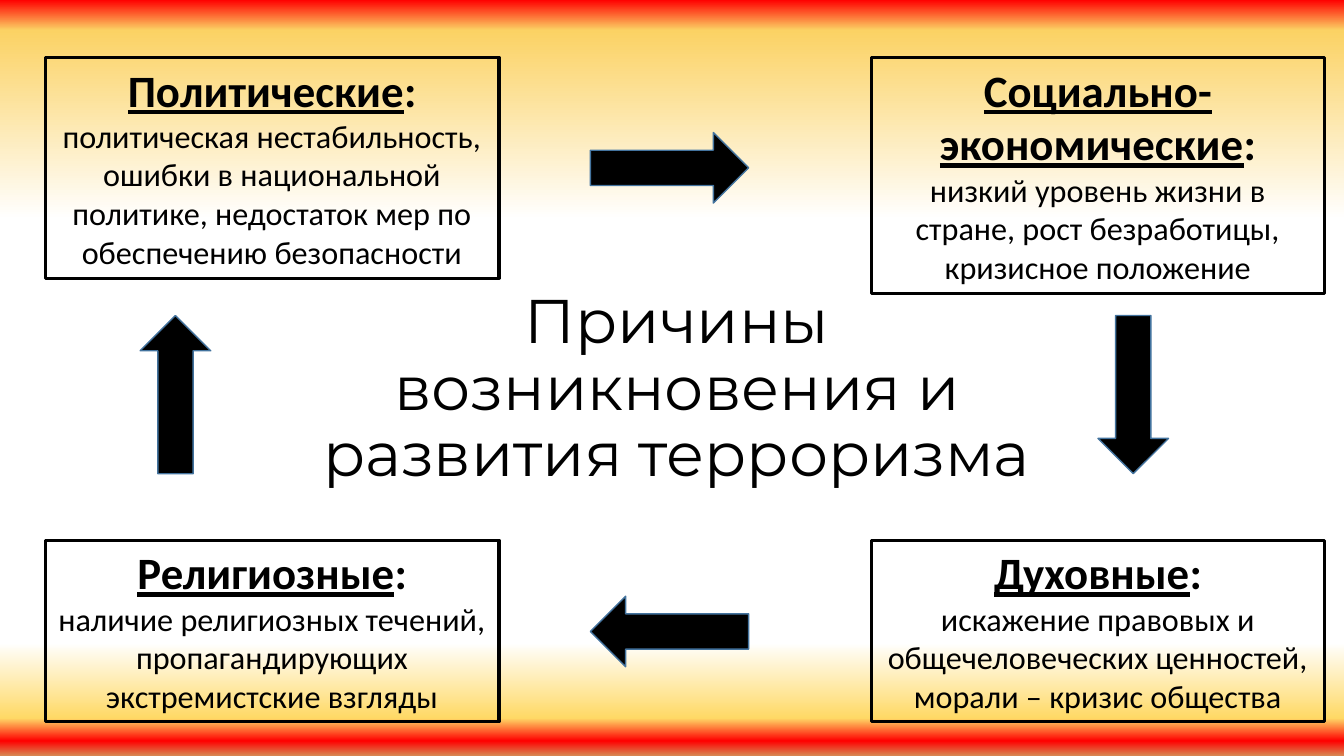
from dataclasses import dataclass

from lxml.etree import SubElement
from pptx import Presentation
from pptx.dml.color import RGBColor
from pptx.enum.shapes import MSO_SHAPE
from pptx.enum.text import MSO_ANCHOR, MSO_AUTO_SIZE, PP_ALIGN
from pptx.oxml.ns import qn
from pptx.slide import Slide
from pptx.text.text import TextFrame
from pptx.util import Emu, Pt

SCALE = 9144  # EMU in one px, 100 px to the inch
COLORS = {"ink": "000000", "edge": "43739E", "red": "FF0000", "gold": "FBD264",
          "white": "FFFFFF", "sand": "FFD966", "clay": "D78853"}
STOPS = [(0, "red"), (4, "gold"), (29, "white"), (85, "white"),
         (95, "sand"), (98, "red"), (100, "clay")]
LEFT, RIGHT, TOP, LOW = 45, 864, 57, 536
BOX_W = 450
ARROW_W, ARROW_H = 70, 157


@dataclass
class Cause:
    x: int
    y: int
    height: int
    name: str
    text: str


@dataclass
class Arrow:
    x: int
    y: int
    turn: int


CAUSES = [
    Cause(LEFT, TOP, 219, "Политические",
          "политическая нестабильность, ошибки в национальной политике, "
          "недостаток мер по обеспечению безопасности"),
    Cause(RIGHT, TOP, 234, "Социально-экономические",
          "низкий уровень жизни в стране, рост безработицы, кризисное положение"),
    Cause(RIGHT, LOW, 180, "Духовные",
          "искажение правовых и общечеловеческих ценностей, "
          "морали – кризис общества"),
    Cause(LEFT, LOW, 180, "Религиозные",
          "наличие религиозных течений, пропагандирующих экстремистские взгляды"),
]
ARROWS = [Arrow(629, 88, 270), Arrow(1089, 313, 0),
          Arrow(629, 548, 90), Arrow(139, 313, 180)]


def px(count: int) -> Emu:
    return Emu(count * SCALE)


def color(name: str) -> RGBColor:
    return RGBColor.from_string(COLORS[name])


def paint_back(slide: Slide) -> None:
    fill = slide.background.fill
    fill.gradient()
    fill.gradient_angle = 270
    stops = slide.element.find(".//" + qn("a:gsLst"))
    stops.clear()
    for place, name in STOPS:
        stop = SubElement(stops, qn("a:gs"), pos=str(place * 1000))
        SubElement(stop, qn("a:srgbClr"), val=COLORS[name])


def style(frame: TextFrame, fonts: list[tuple[str, int, bool]]) -> None:
    """Centre each paragraph and give it a face, a size and a weight."""
    frame.word_wrap = True
    for para, (face, size, bold) in zip(frame.paragraphs, fonts):
        para.alignment = PP_ALIGN.CENTER
        para.font.name = face
        para.font.size = Pt(size)
        para.font.bold = bold
        para.font.color.rgb = color("ink")


def add_title(slide: Slide, text: str) -> None:
    frame = slide.shapes.add_textbox(px(284), px(316), px(775), px(175)).text_frame
    frame.text = text
    frame.vertical_anchor = MSO_ANCHOR.BOTTOM
    frame.paragraphs[0].line_spacing = 0.9
    style(frame, [("Montserrat", 44, False)])


def add_cause(slide: Slide, cause: Cause) -> None:
    box = slide.shapes.add_textbox(px(cause.x), px(cause.y), px(BOX_W), px(cause.height))
    box.line.color.rgb = color("ink")
    box.line.width = Pt(2.25)
    frame = box.text_frame
    head = frame.paragraphs[0]
    name = head.add_run()
    name.text = cause.name
    name.font.underline = True
    head.add_run().text = ":"
    frame.add_paragraph().text = cause.text
    style(frame, [("Calibri", 32, True), ("Calibri", 23, False)])
    frame.auto_size = MSO_AUTO_SIZE.SHAPE_TO_FIT_TEXT


def add_arrow(slide: Slide, arrow: Arrow) -> None:
    shape = slide.shapes.add_shape(MSO_SHAPE.DOWN_ARROW, px(arrow.x), px(arrow.y),
                                   px(ARROW_W), px(ARROW_H))
    shape.rotation = arrow.turn
    shape.shadow.inherit = False
    shape.fill.solid()
    shape.fill.fore_color.rgb = color("ink")
    shape.line.color.rgb = color("edge")
    shape.line.width = Pt(1)


def main() -> None:
    deck = Presentation()
    deck.slide_width, deck.slide_height = px(1333), px(750)
    slide = deck.slides.add_slide(deck.slide_layouts[6])
    paint_back(slide)
    add_title(slide, "Причины возникновения и развития терроризма")
    for cause in CAUSES:
        add_cause(slide, cause)
    for arrow in ARROWS:
        add_arrow(slide, arrow)
    deck.save("out.pptx")


if __name__ == "__main__":
    main()
